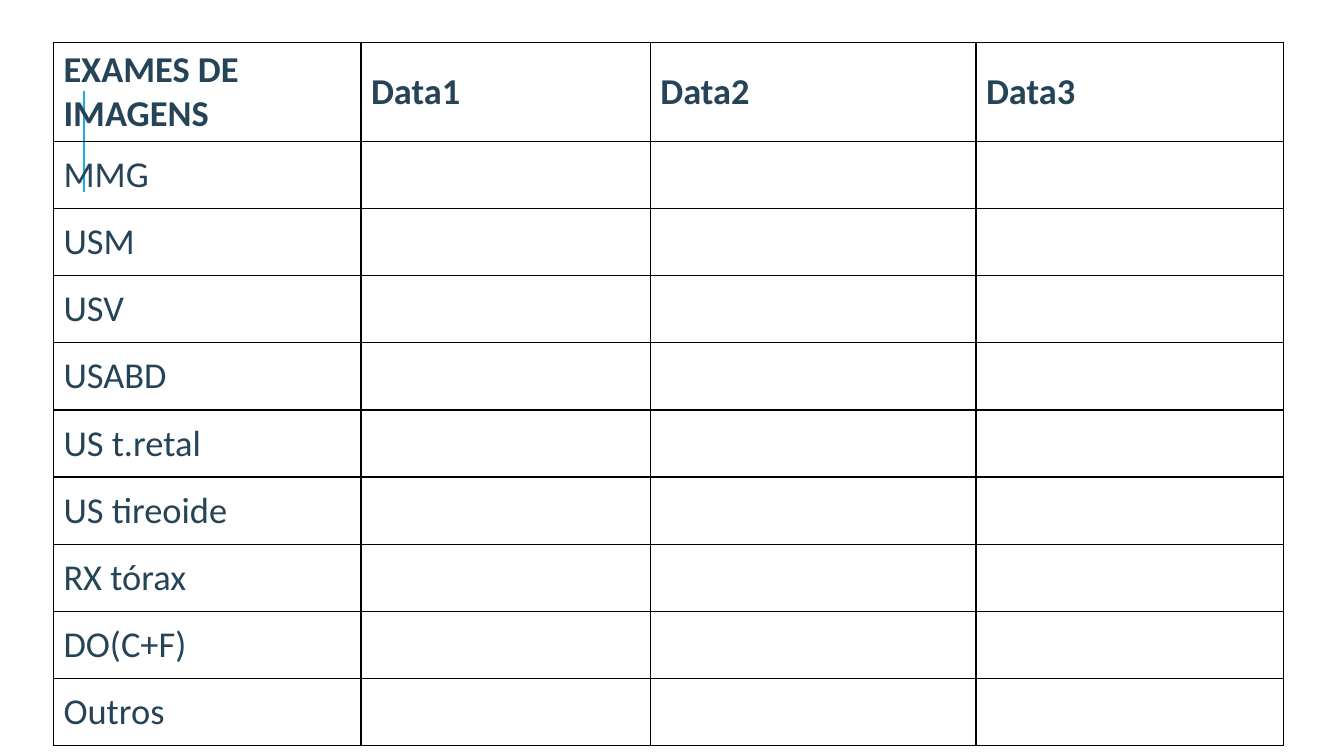
from lxml.etree import SubElement
from pptx import Presentation
from pptx.dml.color import RGBColor
from pptx.enum.shapes import MSO_CONNECTOR
from pptx.enum.text import MSO_ANCHOR
from pptx.oxml.ns import qn
from pptx.util import Inches, Pt

COLORS = {"text": "264457", "border": "000000", "accent": "1CADE4"}
FONT = {"name": "Calibri", "size": Pt(26)}
HEADER = ["EXAMES DE IMAGENS", "Data1", "Data2", "Data3"]
EXAMS = ["MMG", "USM", "USV", "USABD", "US t.retal", "US tireoide",
         "RX tórax", "DO(C+F)", "Outros"]
COL_WIDTHS = [3.05, 2.87, 3.23, 3.05]


def rgb(name):
    return RGBColor.from_string(COLORS[name])


def add_accent_line(s, x, y, height):
    """Vertical accent line, drawn from bottom to top."""
    line = s.shapes.add_connector(MSO_CONNECTOR.STRAIGHT, Inches(x),
                                  Inches(y + height), Inches(x), Inches(y))
    line.line.color.rgb = rgb("accent")
    line.line.width = Pt(1.5)
    SubElement(line._element.spPr, qn("a:effectLst"))


def set_borders(cell, width=0.97):
    tc_pr = cell._tc.get_or_add_tcPr()
    for side in ("lnL", "lnR", "lnT", "lnB"):
        ln = SubElement(tc_pr, qn(f"a:{side}"), w=str(Pt(width)))
        fill = SubElement(ln, qn("a:solidFill"))
        SubElement(fill, qn("a:srgbClr"), val=COLORS["border"])


def format_cell(cell, text, bold):
    set_borders(cell)
    cell.fill.background()
    cell.vertical_anchor = MSO_ANCHOR.MIDDLE
    p = cell.text_frame.paragraphs[0]
    if text:
        r = p.add_run()
        r.text = text
        for key, value in {**FONT, "bold": bold}.items():
            setattr(r.font, key, value)
        r.font.color.rgb = rgb("text")


def add_exam_table(s, x, y, width, height):
    rows = [HEADER] + [[exam, "", "", ""] for exam in EXAMS]
    table = s.shapes.add_table(len(rows), len(HEADER), Inches(x), Inches(y),
                               Inches(width), Inches(height)).table
    table.first_row = table.horz_banding = False
    for column, col_width in zip(table.columns, COL_WIDTHS):
        column.width = Inches(col_width)
    for i, texts in enumerate(rows):
        table.rows[i].height = Inches(height / len(rows))
        for j, text in enumerate(texts):
            format_cell(table.cell(i, j), text, bold=i == 0)


def main():
    prs = Presentation()
    prs.slide_width, prs.slide_height = Inches(13.33), Inches(7.5)
    s = prs.slides.add_slide(prs.slide_layouts[6])
    # Accent line lies behind the table
    add_accent_line(s, 0.83, 0.9, 1)
    add_exam_table(s, 0.53, 0.42, sum(COL_WIDTHS), 6.66)
    prs.save("out.pptx")


if __name__ == "__main__":
    main()
